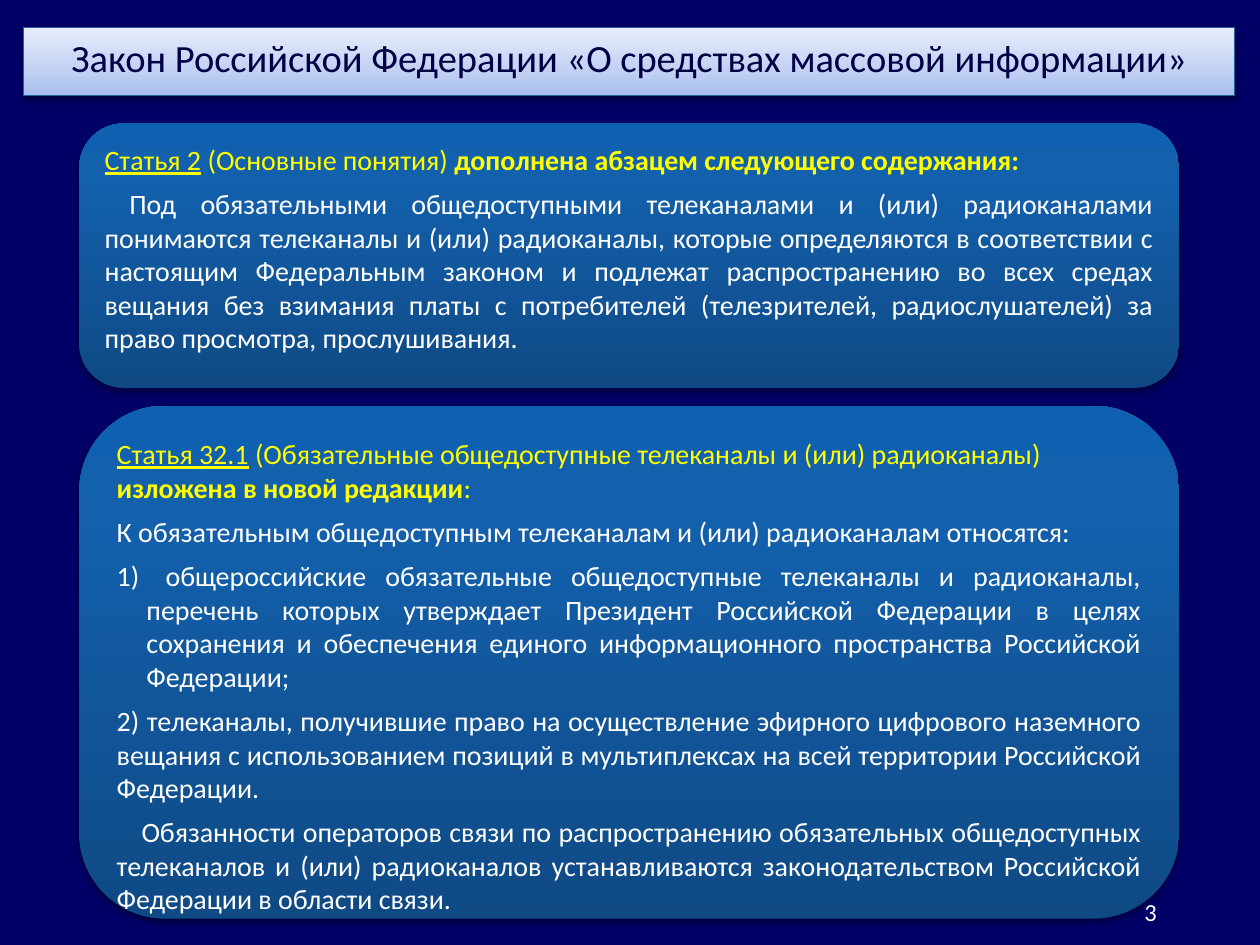
import pptx
import pptx.util
import pptx.oxml
import pptx.oxml.ns
import pptx.dml.color
import pptx.enum.shapes
import pptx.enum.text
from dataclasses import dataclass

Cm, Pt = pptx.util.Cm, pptx.util.Pt
RGB = pptx.dml.color.RGBColor
ALIGN = pptx.enum.text.PP_ALIGN
ANCHOR = pptx.enum.text.MSO_ANCHOR
NS = pptx.oxml.ns.nsdecls("a")
FONT = "Calibri"
COLORS = {"back": "000066", "navy": "000044", "edge": "22619F",
          "gold": "FFFF00", "white": "FFFFFF", "shade": "000000"}
# Gradients run from the bottom edge to the top
PALE = ((0, "A5BDEF"), (35, "C1D0F3"), (100, "E6EDFB"))
BLUE = ((0, "0F4A85"), (80, "1360AD"), (100, "1060B1"))


@dataclass
class Run:
    text: str
    color: str = "white"
    bold: bool = False
    under: bool = False
    size: int = 16


@dataclass
class Para:
    runs: list
    align: ALIGN = ALIGN.JUSTIFY
    indent: float = 0.0
    number: bool = False


@dataclass
class Panel:
    top: float
    height: float
    paras: list


def rgb(name: str) -> RGB:
    return RGB.from_string(COLORS[name])


def shade(shape, stops: tuple, alpha: int, dist: float) -> None:
    """Give a shape a vertical gradient and a soft shadow below."""
    shape.fill.gradient()
    shape.fill.gradient_angle = 90
    props = shape.element.spPr
    bands = props.find(".//" + pptx.oxml.ns.qn("a:gsLst"))
    for stop in list(bands):
        bands.remove(stop)
    for pos, color in stops:
        bands.append(pptx.oxml.parse_xml(
            f'<a:gs {NS} pos="{pos * 1000}"><a:srgbClr val="{color}"/></a:gs>'))
    shape.shadow.inherit = False
    props.find(pptx.oxml.ns.qn("a:effectLst")).append(pptx.oxml.parse_xml(
        f'<a:outerShdw {NS} blurRad="{Pt(3.1)}" dist="{Pt(dist)}" dir="5400000" '
        f'rotWithShape="0"><a:srgbClr val="{COLORS["shade"]}">'
        f'<a:alpha val="{alpha * 1000}"/></a:srgbClr></a:outerShdw>'))


def write(shape, paras: list, anchor: ANCHOR = ANCHOR.TOP) -> None:
    frame = shape.text_frame
    frame.word_wrap = True
    frame.auto_size = pptx.enum.text.MSO_AUTO_SIZE.NONE
    frame.vertical_anchor = anchor
    for i, para in enumerate(paras):
        line = frame.add_paragraph() if i else frame.paragraphs[0]
        line.alignment = para.align
        if i:
            line.space_before = Pt(6)
        props = line._p.get_or_add_pPr()
        if para.indent:
            props.set("indent", str(Cm(para.indent)))
        if para.number:
            props.set("marL", str(-Cm(para.indent)))
            props.append(pptx.oxml.parse_xml(
                f'<a:buFont {NS} typeface="{FONT}"/>'))
            props.append(pptx.oxml.parse_xml(
                f'<a:buAutoNum {NS} type="arabicParenR"/>'))
        for item in para.runs:
            run = line.add_run()
            run.text = item.text
            font = run.font
            font.name, font.size = FONT, Pt(item.size)
            font.bold, font.underline = item.bold, item.under
            font.color.rgb = rgb(item.color)


def draw(slide, panel: Panel) -> None:
    shape = slide.shapes.add_shape(
        pptx.enum.shapes.MSO_SHAPE.ROUNDED_RECTANGLE,
        Cm(1.6), Cm(panel.top), Cm(22.17), Cm(panel.height))
    shape.line.fill.background()
    shade(shape, BLUE, 35, 1.8)
    write(shape, panel.paras)


PANELS = [
    Panel(2.49, 5.33, [
        Para([Run("Статья 2", "gold", under=True),
              Run(" (Основные понятия) ", "gold"),
              Run("дополнена абзацем следующего содержания:", "gold", True)],
             ALIGN.LEFT),
        Para([Run("Под обязательными общедоступными телеканалами и (или) "
                  "радиоканалами понимаются телеканалы и (или) радиоканалы, "
                  "которые определяются в соответствии с настоящим Федеральным "
                  "законом и подлежат распространению во всех средах вещания без "
                  "взимания платы с потребителей (телезрителей, радиослушателей) "
                  "за право просмотра, прослушивания.")], indent=0.5),
    ]),
    Panel(8.18, 10.34, [
        Para([Run("Статья 32.1", "gold", under=True),
              Run(" (Обязательные общедоступные телеканалы и (или) "
                  "радиоканалы) ", "gold"),
              Run("изложена в новой редакции", "gold", True),
              Run(":", "gold")], ALIGN.LEFT),
        Para([Run("К обязательным общедоступным телеканалам и (или) "
                  "радиоканалам относятся:")], ALIGN.LEFT),
        Para([Run(" общероссийские обязательные общедоступные телеканалы и "
                  "радиоканалы, перечень которых утверждает Президент Российской "
                  "Федерации в целях сохранения и обеспечения единого "
                  "информационного пространства Российской Федерации;")],
             indent=-0.6, number=True),
        Para([Run("2) телеканалы, получившие право на осуществление эфирного "
                  "цифрового наземного вещания с использованием позиций в "
                  "мультиплексах на всей территории Российской Федерации.")]),
        Para([Run("Обязанности операторов связи по распространению обязательных "
                  "общедоступных телеканалов и (или) радиоканалов "
                  "устанавливаются законодательством Российской Федерации в "
                  "области связи.")], indent=0.5),
    ]),
]


def main() -> None:
    deck = pptx.Presentation()
    deck.slide_width, deck.slide_height = Cm(25.4), Cm(19.05)
    slide = deck.slides.add_slide(deck.slide_layouts[5])
    slide.background.fill.solid()
    slide.background.fill.fore_color.rgb = rgb("back")

    # Title bar
    title = slide.shapes.title
    title.left, title.top = Cm(0.48), Cm(0.56)
    title.width, title.height = Cm(24.41), Cm(1.37)
    title.line.color.rgb = rgb("edge")
    title.line.width = Pt(0.75)
    shade(title, PALE, 38, 1.6)
    write(title, [Para([Run("Закон Российской Федерации «О средствах массовой "
                            "информации»", "navy", size=22)], ALIGN.CENTER)])

    # Page number
    page = slide.shapes.add_textbox(Cm(18.29), Cm(17.53), Cm(5.28), Cm(1.27))
    write(page, [Para([Run("3", size=14)], ALIGN.RIGHT)], ANCHOR.BOTTOM)

    # Law articles
    for panel in PANELS:
        draw(slide, panel)

    deck.save("out.pptx")


if __name__ == "__main__":
    main()
